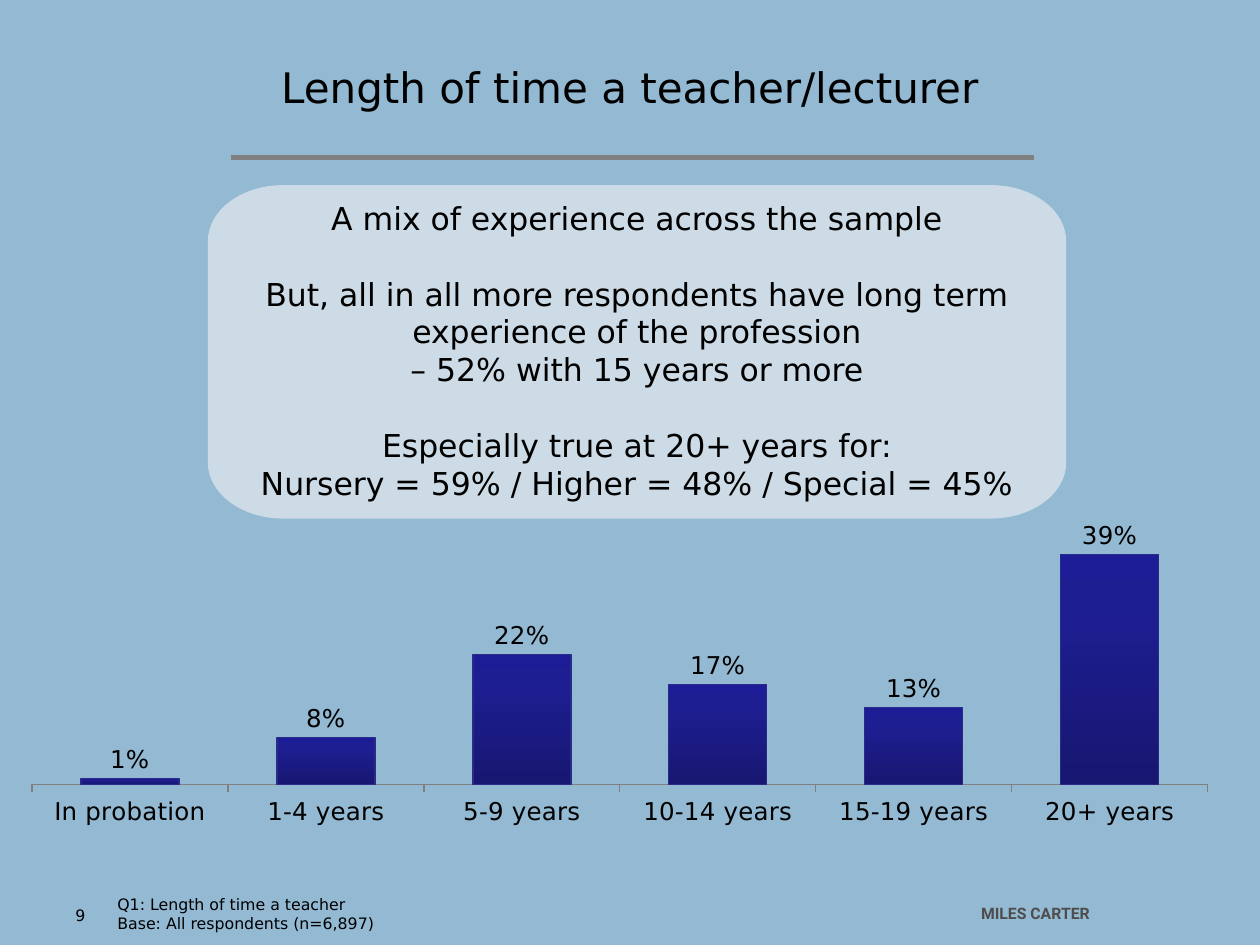
from copy import deepcopy
from math import cos, pi, sin

from lxml.etree import SubElement
from pptx import Presentation
from pptx.chart.data import CategoryChartData
from pptx.dml.color import RGBColor
from pptx.enum.chart import XL_CHART_TYPE, XL_LABEL_POSITION, XL_TICK_LABEL_POSITION, XL_TICK_MARK
from pptx.enum.shapes import MSO_CONNECTOR
from pptx.enum.text import MSO_ANCHOR, PP_ALIGN
from pptx.oxml.ns import qn
from pptx.util import Pt

COLOURS = {
    "background": "93B9D3", "rule": "808080", "footer": "4D4D4D", "text": "000000", "panel": "F2F2F2",
    "bar_dark": "171771", "bar_mid": "1E1E93", "bar_light": "1C1C96", "bar_line": "2A2A89",
}
FONT = "DejaVu Sans"
EXPERIENCE = {
    "In probation": 0.01, "1-4 years": 0.08, "5-9 years": 0.22,
    "10-14 years": 0.17, "15-19 years": 0.13, "20+ years": 0.39,
}
PANEL_LINES = [
    ("A mix of experience across the sample", 0),
    ("But, all in all more respondents have long term experience of the profession", 21.6),
    ("– 52% with 15 years or more", 0),
    ("Especially true at 20+ years for:", 21.6),
    ("Nursery = 59% / Higher = 48% / Special = 45%", 0),
]


def colour(name):
    """Return the named colour."""
    return RGBColor.from_string(COLOURS[name])


def set_all(target, formats):
    """Set every format value on the target."""
    for name, value in formats.items():
        setattr(target, name, value)


def style_font(font, size, shade="text", name=FONT, bold=False):
    """Set the face, size and colour of a font."""
    set_all(font, {"name": name, "size": Pt(size), "bold": bold})
    font.color.rgb = colour(shade)


def write_lines(shape, lines, size, frame_formats=None, para_formats=None, **font_formats):
    """Write (text, space before) lines into a shape."""
    frame = shape.text_frame
    set_all(frame, {"word_wrap": True, "vertical_anchor": MSO_ANCHOR.TOP, **(frame_formats or {})})
    for index, (text, gap) in enumerate(lines):
        para = frame.add_paragraph() if index else frame.paragraphs[0]
        set_all(para, {"space_before": Pt(gap), **(para_formats or {})})
        span = para.add_run()
        span.text = text
        style_font(span.font, size, **font_formats)


def add_text(page, box, lines, size, **formats):
    """Add a text box holding the given lines."""
    shape = page.shapes.add_textbox(*map(Pt, box))
    write_lines(shape, [(line, 0) for line in lines], size, **formats)


def add_header(page, box):
    """Add the title and the rule below it."""
    left, top, width, height = box
    rule_left, rule_top, rule_width = left + 95.8, top + height - 4.5, 459.3
    rule = page.shapes.add_connector(
        MSO_CONNECTOR.STRAIGHT, Pt(rule_left), Pt(rule_top), Pt(rule_left + rule_width), Pt(rule_top))
    rule.line.width = Pt(3)
    rule.line.color.rgb = colour("rule")
    SubElement(rule._element.spPr, qn("a:effectLst"))
    add_text(page, box, ["Length of time a teacher/lecturer"], 24,
             frame_formats={"vertical_anchor": MSO_ANCHOR.MIDDLE},
             para_formats={"alignment": PP_ALIGN.CENTER})


def fill_bars(series):
    """Give the bars their gradient and outline."""
    bar = series.format
    bar.fill.gradient()
    bar.fill.gradient_angle = 90
    stop_list = bar.fill._fill._gradFill.gsLst
    stop_list.append(deepcopy(stop_list[-1]))
    shades = (("bar_dark", 0), ("bar_mid", 0.8), ("bar_light", 1))
    for stop, (shade, position) in zip(bar.fill.gradient_stops, shades):
        stop.color.rgb = colour(shade)
        stop.position = position
    bar.line.width = Pt(0.75)
    bar.line.color.rgb = colour("bar_line")


def add_experience_chart(page, box):
    """Add the column chart of teaching experience."""
    data = CategoryChartData(number_format="0%")
    data.categories = list(EXPERIENCE)
    data.add_series("Series 1", list(EXPERIENCE.values()))
    chart = page.shapes.add_chart(XL_CHART_TYPE.COLUMN_CLUSTERED, *map(Pt, box), data).chart
    set_all(chart, {"has_legend": False, "has_title": False})
    style_font(chart.font, 18)
    set_all(chart.value_axis, {
        "minimum_scale": 0, "maximum_scale": 1, "major_unit": 0.2,
        "has_major_gridlines": False, "visible": False})
    axis = chart.category_axis
    set_all(axis, {
        "major_tick_mark": XL_TICK_MARK.OUTSIDE, "has_major_gridlines": False,
        "tick_label_position": XL_TICK_LABEL_POSITION.LOW})
    axis.format.line.width = Pt(0.75)
    axis.format.line.color.rgb = colour("rule")
    style_font(axis.tick_labels.font, 14)
    plot = chart.plots[0]
    set_all(plot, {"gap_width": 100, "vary_by_categories": False, "has_data_labels": True})
    set_all(plot.data_labels, {
        "show_value": True, "number_format": "0%", "number_format_is_linked": False,
        "position": XL_LABEL_POSITION.OUTSIDE_END})
    style_font(plot.data_labels.font, 14)
    fill_bars(plot.series[0])
    area = chart._chartSpace.chart.plotArea
    for old in area.findall(qn("c:layout")):
        area.remove(old)
    layout = SubElement(area, qn("c:layout"))
    area.insert(0, layout)
    manual = SubElement(layout, qn("c:manualLayout"))
    values = {"layoutTarget": "inner", "xMode": "edge", "yMode": "edge",
              "x": "0.02", "y": "0.015", "w": "0.96", "h": "0.9"}
    for name, value in values.items():
        SubElement(manual, qn(f"c:{name}")).set("val", value)


def add_panel(page, box):
    """Add the translucent rounded panel of findings."""
    left, top, width, height = box
    radius_x, radius_y, steps = 43, 32, 16
    centres = [(left + width - radius_x, top + height - radius_y), (left + radius_x, top + height - radius_y),
               (left + radius_x, top + radius_y), (left + width - radius_x, top + radius_y)]
    points = []
    for corner, (x, y) in enumerate(centres):
        for step in range(steps + 1):
            angle = (corner + step / steps) * pi / 2
            points.append((Pt(x + radius_x * cos(angle)), Pt(y + radius_y * sin(angle))))
    builder = page.shapes.build_freeform(*points[0])
    builder.add_line_segments(points[1:], close=True)
    panel = builder.convert_to_shape()
    panel.shadow.inherit = False
    panel.line.fill.background()
    panel.fill.solid()
    panel.fill.fore_color.rgb = colour("panel")
    shade = panel._element.spPr.find(qn("a:solidFill"))[0]
    SubElement(shade, qn("a:alpha")).set("val", "60000")
    insets = {"margin_left": Pt(10.8), "margin_right": Pt(10.8), "margin_top": Pt(7.9), "margin_bottom": Pt(7.9)}
    write_lines(panel, PANEL_LINES, 18, frame_formats=insets,
                para_formats={"alignment": PP_ALIGN.CENTER, "line_spacing": Pt(21.6)})


def add_footer(page, box):
    """Add the page number, the question note and the agency name."""
    left, top, width, height = box
    add_text(page, (left + 24, top, 540, height),
             ["Q1: Length of time a teacher", "Base: All respondents (n=6,897)"], 9)
    add_text(page, (left, top + 6.5, 24, 18), ["9"], 9)
    add_text(page, (left + width - 156, top + 5, 156, 18), ["MILES CARTER"], 9,
             para_formats={"alignment": PP_ALIGN.CENTER},
             shade="footer", name="Roboto", bold=True)


def main():
    """Build and save the slide."""
    deck = Presentation()
    set_all(deck, {"slide_width": Pt(720), "slide_height": Pt(540)})
    page = deck.slides.add_slide(deck.slide_layouts[6])
    page.background.fill.solid()
    page.background.fill.fore_color.rgb = colour("background")
    add_header(page, (36, 4.5, 648, 90))
    add_experience_chart(page, (4.3, 105.8, 699.8, 374.4))
    add_panel(page, (118.8, 105.8, 490.5, 190.6))
    add_footer(page, (36, 507.6, 633.6, 28.8))
    deck.save("out.pptx")


if __name__ == "__main__":
    main()
